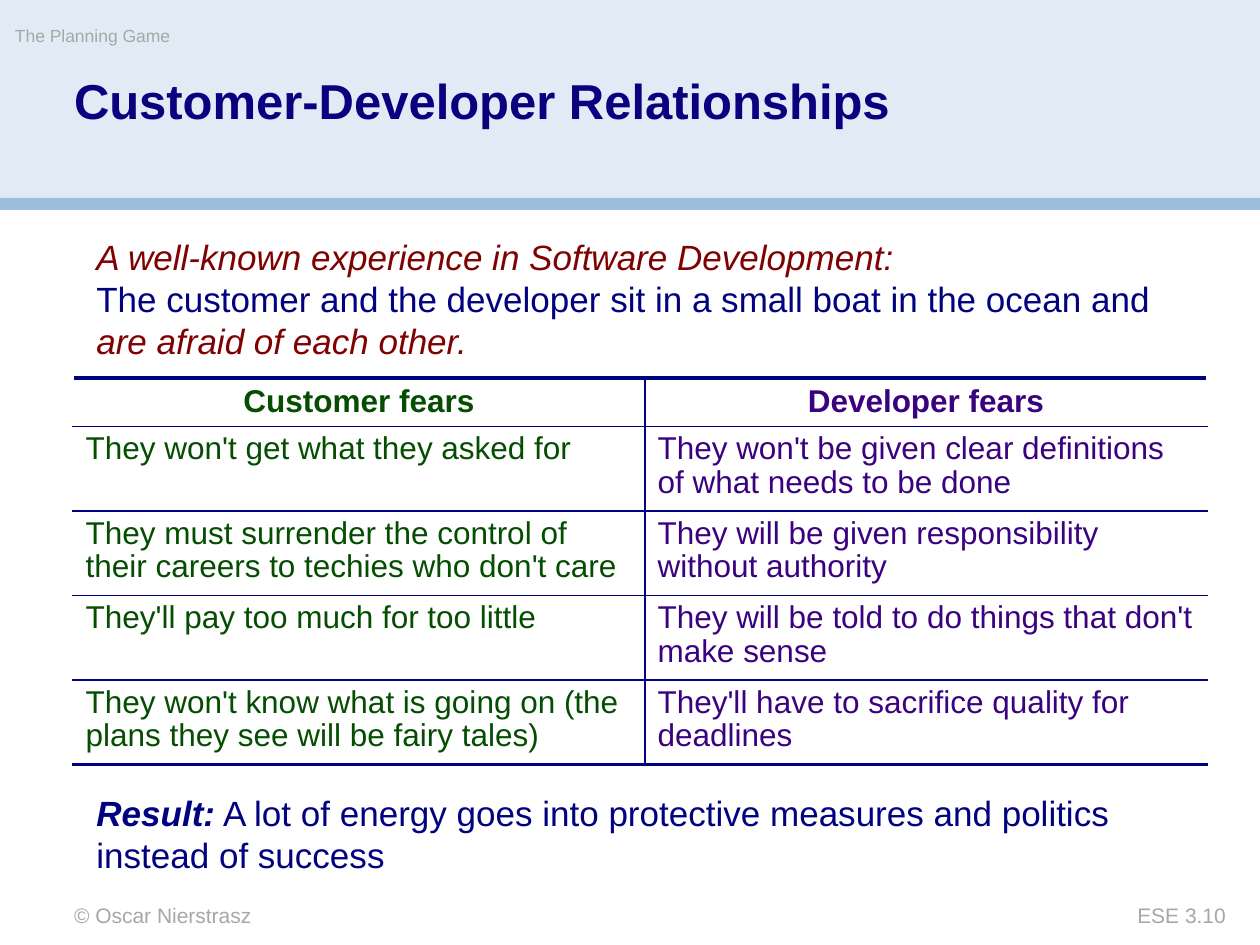
from lxml.etree import SubElement
from pptx import Presentation
from pptx.dml.color import RGBColor
from pptx.enum.shapes import MSO_SHAPE as Shape
from pptx.enum.text import MSO_ANCHOR as Anchor, PP_ALIGN as Align
from pptx.oxml.ns import qn
from pptx.util import Pt

SLIDE_WIDTH, SLIDE_HEIGHT = 1260, 945
EMU_PER_PX = 914400 / 126
FONT = "Arial"
NAVY, TITLE_BLUE, MAROON = "00027F", "0A017F", "7F0101"
GREEN, PURPLE, GREY = "044D01", "3A027F", "A7A7A7"
PALE_BLUE, BAND_BLUE = "E1EBF5", "9CBDDE"

FEARS = [
    ("Customer fears", "Developer fears"),
    ("They won't get what they asked for",
     "They won't be given clear definitions of what needs to be done"),
    ("They must surrender the control of their careers to techies who don't care",
     "They will be given responsibility without authority"),
    ("They'll pay too much for too little",
     "They will be told to do things that don't make sense"),
    ("They won't know what is going on (the plans they see will be fairy tales)",
     "They'll have to sacrifice quality for deadlines"),
]


def px(length):
    return round(length * EMU_PER_PX)


def color(hex_string):
    return RGBColor.from_string(hex_string)


class SlideBuilder:
    """Holds the style and the current slide, and adds each kind of element."""

    def __init__(self, presentation):
        self.slide = presentation.slides.add_slide(presentation.slide_layouts[5])

    def style(self, font, size, fill, bold=False, italic=False):
        font.name, font.size = FONT, Pt(size)
        font.color.rgb = color(fill)
        font.bold, font.italic = bold, italic

    def clear_margins(self, frame):
        frame.margin_left = frame.margin_right = 0
        frame.margin_top = frame.margin_bottom = 0

    def band(self, top, height, fill):
        shape = self.slide.shapes.add_shape(
            Shape.RECTANGLE, 0, px(top), px(SLIDE_WIDTH), px(height))
        shape.shadow.inherit = False
        shape.fill.solid()
        shape.fill.fore_color.rgb = color(fill)
        shape.line.fill.background()

    def title(self, text, left, top, width, height):
        shape = self.slide.shapes.title
        self.slide.shapes._spTree.append(shape._element)
        shape.left, shape.top = px(left), px(top)
        shape.width, shape.height = px(width), px(height)
        frame = shape.text_frame
        self.clear_margins(frame)
        frame.vertical_anchor = Anchor.TOP
        frame.text = text
        paragraph = frame.paragraphs[0]
        paragraph.alignment, paragraph.line_spacing = Align.LEFT, 0.9
        self.style(paragraph.font, 28, TITLE_BLUE, bold=True)

    def text_box(self, left, top, width, height):
        box = self.slide.shapes.add_textbox(px(left), px(top), px(width), px(height))
        box.text_frame.word_wrap = True
        return box.text_frame

    def label(self, text, left, top, width, height, size, align=Align.LEFT):
        frame = self.text_box(left, top, width, height)
        self.clear_margins(frame)
        frame.text = text
        paragraph = frame.paragraphs[0]
        paragraph.alignment = align
        self.style(paragraph.font, size, GREY)

    def body(self, paragraphs, left, top, width, height):
        frame = self.text_box(left, top, width, height)
        for index, runs in enumerate(paragraphs):
            paragraph = frame.add_paragraph() if index else frame.paragraphs[0]
            for text, fill, bold, italic in runs:
                run = paragraph.add_run()
                run.text = text
                self.style(run.font, 20, fill, bold, italic)

    def border(self, cell, side, width):
        properties = cell._tc.get_or_add_tcPr()
        line = SubElement(properties, qn(f"a:ln{side}"), w=str(Pt(width)))
        fill = SubElement(line, qn("a:solidFill"))
        SubElement(fill, qn("a:srgbClr"), val=NAVY)

    def cell(self, cell, text, fill, header):
        cell.text = text
        cell.vertical_anchor = Anchor.MIDDLE if header else Anchor.TOP
        paragraph = cell.text_frame.paragraphs[0]
        paragraph.alignment = Align.CENTER if header else Align.LEFT
        paragraph.line_spacing = 0.95
        spacing = SubElement(paragraph._p.get_or_add_pPr(), qn("a:spcBef"))
        SubElement(spacing, qn("a:spcPct"), val="20000")
        self.style(paragraph.font, 18, fill, bold=header)

    def table(self, rows, left, top, column_widths, row_heights, fills):
        table = self.slide.shapes.add_table(
            len(rows), len(column_widths), px(left), px(top),
            px(sum(column_widths)), px(sum(row_heights))).table
        table.first_row = table.horz_banding = False
        for column, width in zip(table.columns, column_widths):
            column.width = px(width)
        for row, height in zip(table.rows, row_heights):
            row.height = px(height)
        last = len(rows) - 1
        for row_index, texts in enumerate(rows):
            for column_index, (text, fill) in enumerate(zip(texts, fills)):
                cell = table.cell(row_index, column_index)
                self.cell(cell, text, fill, header=row_index == 0)
                self.border(cell, "L" if column_index else "R", 1)
                self.border(cell, "T", 1 if row_index else 2.25)
                self.border(cell, "B", 2.25 if row_index == last else 1)
                cell.fill.background()


def main():
    presentation = Presentation()
    presentation.slide_width = px(SLIDE_WIDTH)
    presentation.slide_height = px(SLIDE_HEIGHT)
    builder = SlideBuilder(presentation)
    builder.band(0, 199, PALE_BLUE)
    builder.band(198, 12, BAND_BLUE)
    builder.label("© Oscar Nierstrasz", 74, 903, 525, 25, 12)
    builder.label("The Planning Game", 15, 25, 743, 35, 10)
    builder.label("ESE 3.10", 1040, 903, 186, 25, 12, Align.RIGHT)
    builder.title("Customer-Developer Relationships", 74, 77, 1113, 112)
    builder.body([
        [("A well-known experience in Software Development:", MAROON, False, True)],
        [("The customer and the developer sit in a small boat in the ocean and ",
          NAVY, False, False),
         ("are afraid of each other.", MAROON, False, True)],
    ], 84, 229, 1124, 139)
    builder.table(FEARS, 73, 378, [572, 562], [48] + [84] * 4, [GREEN, PURPLE])
    builder.body([
        [("Result:", NAVY, True, True),
         (" A lot of energy goes into protective measures and politics instead of success",
          NAVY, False, False)],
    ], 84, 785, 1113, 97)
    presentation.save("out.pptx")


if __name__ == "__main__":
    main()
